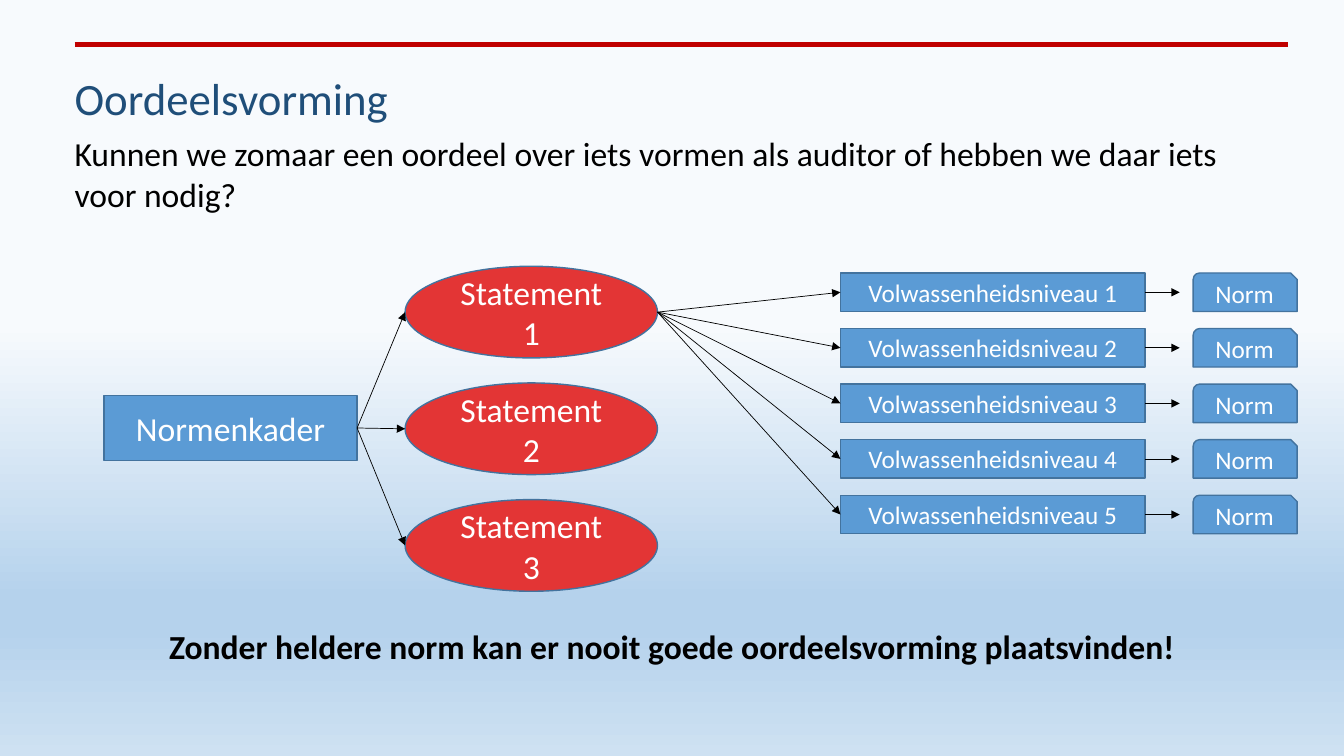
from copy import deepcopy
from dataclasses import dataclass

from pptx import Presentation
from pptx.dml.color import RGBColor
from pptx.enum.shapes import MSO_CONNECTOR, MSO_SHAPE
from pptx.enum.text import MSO_ANCHOR, MSO_AUTO_SIZE, PP_ALIGN
from pptx.oxml.ns import qn
from pptx.util import Cm, Pt
from lxml.etree import SubElement

TOP, LEFT, BOTTOM, RIGHT = range(4)


@dataclass(frozen=True)
class Theme:
    font: str = "Calibri"
    title: str = "1F4E79"
    ink: str = "000000"
    white: str = "FFFFFF"
    accent: str = "C00000"
    block: str = "5B9BD5"
    statement: str = "E33535"
    outline: str = "43739E"
    backdrop: tuple = ((0.43, "F7FAFD"), (0.79, "B5D2EC"), (0.83, "B5D2EC"), (1, "CEE1F2"))
    title_size: int = 32
    body_size: int = 24
    small_size: int = 18


THEME = Theme()


def rgb(code):
    return RGBColor.from_string(code)


def paint_backdrop(slide):
    fill = slide.background.fill
    fill.gradient()
    fill.gradient_angle = 270
    stops = slide.element.find(".//" + qn("a:gsLst"))
    while len(stops) < len(THEME.backdrop):
        stops.append(deepcopy(stops[0]))
    for stop, (position, code) in zip(fill.gradient_stops, THEME.backdrop):
        stop.position = position
        stop.color.rgb = rgb(code)


def write(frame, text, size, color, bold=False):
    frame.word_wrap = True
    frame.text = text
    font = frame.paragraphs[0].runs[0].font
    font.name = THEME.font
    font.size = Pt(size)
    font.color.rgb = rgb(color)
    font.bold = bold


def add_text(slide, text, left, top, width, height, size, color, bold=False):
    frame = slide.shapes.add_textbox(Cm(left), Cm(top), Cm(width), Cm(height)).text_frame
    write(frame, text, size, color, bold)
    frame.auto_size = MSO_AUTO_SIZE.SHAPE_TO_FIT_TEXT


def add_block(slide, kind, text, left, top, width, height, fill, size):
    block = slide.shapes.add_shape(kind, Cm(left), Cm(top), Cm(width), Cm(height))
    block.shadow.inherit = False
    block.fill.solid()
    block.fill.fore_color.rgb = rgb(fill)
    block.line.color.rgb = rgb(THEME.outline)
    block.line.width = Pt(1)
    write(block.text_frame, text, size, THEME.white)
    block.text_frame.vertical_anchor = MSO_ANCHOR.MIDDLE
    block.text_frame.paragraphs[0].alignment = PP_ALIGN.CENTER
    return block


def add_line(slide, start, end, color, width):
    line = slide.shapes.add_connector(MSO_CONNECTOR.STRAIGHT, *start, *end)
    line.line.color.rgb = rgb(color)
    line.line.width = Pt(width)
    SubElement(line.element.spPr, qn("a:effectLst"))
    return line


def add_arrow(slide, start, end):
    arrow = add_line(slide, start, end, THEME.ink, 0.5)
    SubElement(arrow.line._get_or_add_ln(), qn("a:tailEnd"), type="triangle")
    return arrow


def left_middle(block):
    return block.left, block.top + block.height // 2


def right_middle(block):
    return block.left + block.width, block.top + block.height // 2


def add_statements(slide, framework):
    statements = []
    for index in range(3):
        statement = add_block(slide, MSO_SHAPE.OVAL, f"Statement {index + 1}",
                              10.21, 6.71 + 2.94 * index, 6.36, 2.31,
                              THEME.statement, THEME.body_size)
        arrow = add_arrow(slide, right_middle(framework), left_middle(statement))
        arrow.begin_connect(framework, RIGHT)
        statements.append(statement)
    return statements


def add_levels(slide, statement):
    for index in range(5):
        top = 6.88 + 1.4 * index
        level = add_block(slide, MSO_SHAPE.RECTANGLE, f"Volwassenheidsniveau {index + 1}",
                          21.18, top, 7.68, 0.97, THEME.block, THEME.small_size)
        add_block(slide, MSO_SHAPE.SNIP_ROUND_RECTANGLE, "Norm",
                  30.07, top, 2.62, 0.97, THEME.block, THEME.small_size)
        to_level = add_arrow(slide, right_middle(statement), left_middle(level))
        to_level.end_connect(level, LEFT)
        x, y = right_middle(level)
        to_norm = add_arrow(slide, (x, y), (x + Cm(0.87), y))
        to_norm.begin_connect(level, RIGHT)


def main():
    deck = Presentation()
    deck.slide_width, deck.slide_height = Cm(33.87), Cm(19.05)
    slide = deck.slides.add_slide(deck.slide_layouts[6])
    paint_backdrop(slide)

    add_line(slide, (Cm(1.88), Cm(1.12)), (Cm(32.46), Cm(1.12)), THEME.accent, 3)
    add_text(slide, "Oordeelsvorming", 1.63, 1.65, 25.58, 1.63,
             THEME.title_size, THEME.title)
    add_text(slide, "Kunnen we zomaar een oordeel over iets vormen als auditor "
             "of hebben we daar iets voor nodig?", 1.63, 3.23, 30.76, 2.31,
             THEME.body_size, THEME.ink)

    framework = add_block(slide, MSO_SHAPE.RECTANGLE, "Normenkader",
                          2.62, 9.96, 6.38, 1.65, THEME.block, THEME.body_size)
    statements = add_statements(slide, framework)
    add_levels(slide, statements[0])

    add_text(slide, "Zonder heldere norm kan er nooit goede oordeelsvorming plaatsvinden!",
             4.01, 15.65, 29.5, 1.27, THEME.body_size, THEME.ink, bold=True)
    deck.save("out.pptx")


if __name__ == "__main__":
    main()
